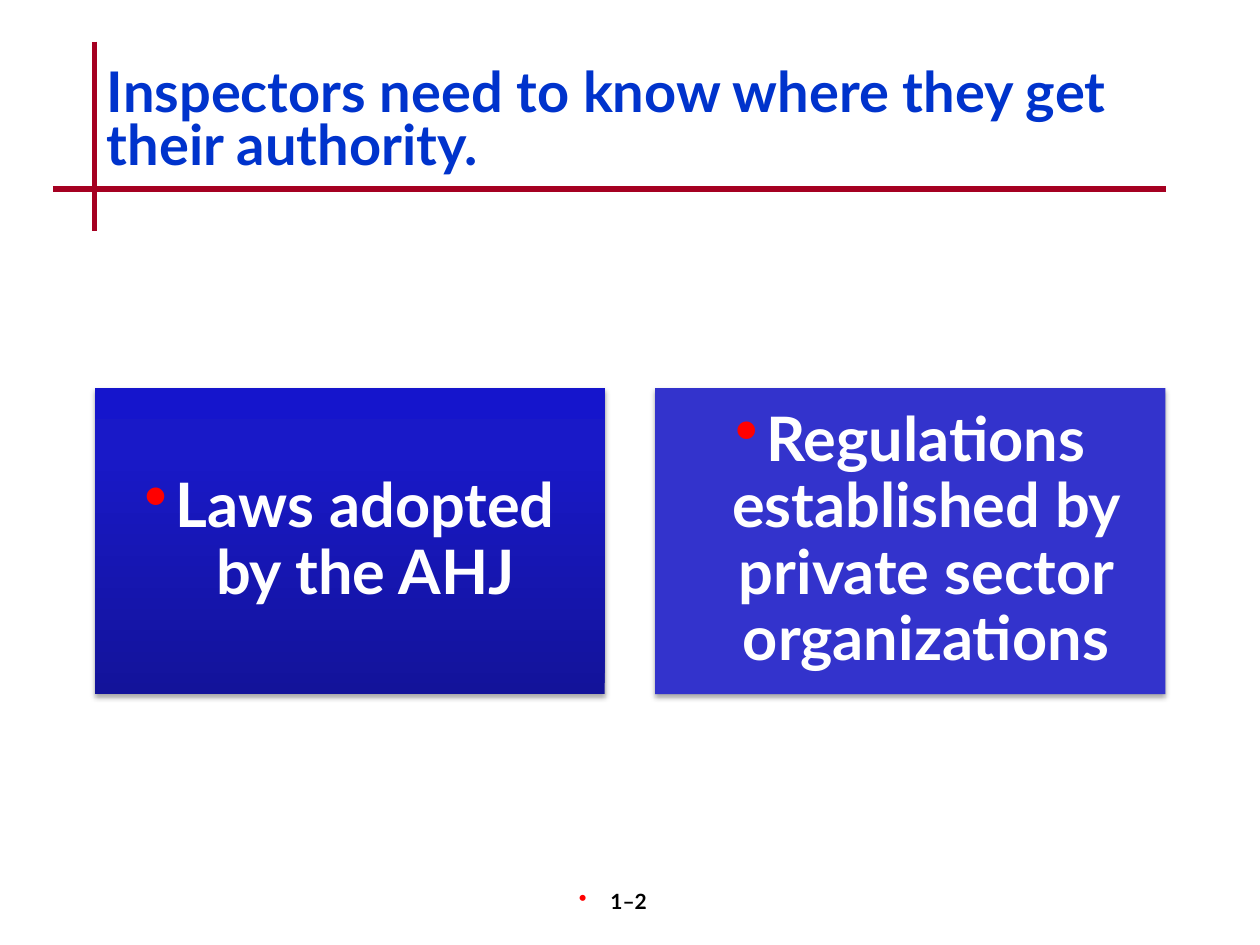
from dataclasses import dataclass

from lxml import etree
from pptx import Presentation
from pptx.dml.color import RGBColor
from pptx.enum.shapes import MSO_CONNECTOR as Connector, MSO_SHAPE as Shape
from pptx.enum.text import MSO_ANCHOR as Anchor, PP_ALIGN as Align
from pptx.oxml import parse_xml
from pptx.oxml.ns import nsdecls, qn
from pptx.util import Inches, Pt

RULE_RED = RGBColor(0xA5, 0x00, 0x21)
TITLE_BLUE = RGBColor(0x00, 0x33, 0xCC)
CARD_BLUE = RGBColor(0x33, 0x33, 0xCC)
BULLET_RED = RGBColor(0xFF, 0x00, 0x00)
BLACK = RGBColor(0x00, 0x00, 0x00)
WHITE = RGBColor(0xFF, 0xFF, 0xFF)
GRADIENT = (
    (0, RGBColor(0x13, 0x13, 0x9A)),
    (80, RGBColor(0x19, 0x19, 0xC8)),
    (100, RGBColor(0x15, 0x15, 0xCC)),
)

LEFT, RIGHT = 0.75, 9.25
CARD_WIDTH, CARD_HEIGHT, CARD_TOP = 4.05, 2.43, 3.08
BULLET_INDENT = 0.25


@dataclass
class Rule:
    start: tuple[float, float]
    end: tuple[float, float]


@dataclass
class TextStyle:
    size: int
    color: RGBColor
    align: Align = Align.CENTER
    spacing: float = 1.0
    bullet: bool = False


@dataclass
class Card:
    text: str
    left: float
    gradient: bool


RULES = (
    Rule((LEFT, 0.33), (LEFT, 1.83)),
    Rule((0.42, 1.5), (RIGHT, 1.5)),
)
CARDS = (
    Card("Laws adopted by the AHJ", LEFT, True),
    Card("Regulations established by private sector organizations",
         RIGHT - CARD_WIDTH, False),
)
TITLE_STYLE = TextStyle(32, TITLE_BLUE, Align.LEFT, 0.8)
CARD_STYLE = TextStyle(35, WHITE, spacing=0.9, bullet=True)
NUMBER_STYLE = TextStyle(12, BLACK, bullet=True)


def set_values(target, values: dict) -> None:
    for name, value in values.items():
        setattr(target, name, value)


def add_bullet(paragraph) -> None:
    properties = paragraph._p.get_or_add_pPr()
    properties.set("marL", str(Inches(BULLET_INDENT)))
    properties.set("indent", str(-Inches(BULLET_INDENT)))
    for xml in (
        f'<a:buClr {nsdecls("a")}><a:srgbClr val="{BULLET_RED}"/></a:buClr>',
        f'<a:buSzPct {nsdecls("a")} val="110000"/>',
        f'<a:buChar {nsdecls("a")} char="•"/>',
    ):
        properties.append(parse_xml(xml))


def write_text(shape, text: str, style: TextStyle, frame_values: dict) -> None:
    frame = shape.text_frame
    set_values(frame, {"word_wrap": True, **frame_values})
    paragraph = frame.paragraphs[0]
    if style.bullet:
        add_bullet(paragraph)
    set_values(paragraph, {"alignment": style.align, "line_spacing": style.spacing})
    run = paragraph.add_run()
    run.text = text
    set_values(run.font, {"name": "Lato", "size": Pt(style.size), "bold": True})
    run.font.color.rgb = style.color


def add_rule(slide, rule: Rule) -> None:
    points = [Inches(value) for value in (*rule.start, *rule.end)]
    connector = slide.shapes.add_connector(Connector.STRAIGHT, *points)
    connector.line.color.rgb = RULE_RED
    connector.line.width = Pt(3)
    etree.SubElement(connector._element.spPr, qn("a:effectLst"))


def fill_gradient(shape) -> None:
    shape.fill.gradient()
    gradient = shape._element.spPr.find(qn("a:gradFill"))
    stops = "".join(
        f'<a:gs pos="{position * 1000}"><a:srgbClr val="{color}"/></a:gs>'
        for position, color in GRADIENT
    )
    gradient.getparent().replace(gradient, parse_xml(
        f'<a:gradFill {nsdecls("a")} rotWithShape="1"><a:gsLst>{stops}</a:gsLst>'
        '<a:lin ang="16200000" scaled="0"/></a:gradFill>'))


def add_shadow(shape) -> None:
    shape.shadow.inherit = False
    effects = shape._element.spPr.find(qn("a:effectLst"))
    effects.append(parse_xml(
        f'<a:outerShdw {nsdecls("a")} blurRad="{Pt(3.1)}" dist="{Pt(1.8)}"'
        ' dir="5400000" rotWithShape="0"><a:srgbClr val="000000">'
        '<a:alpha val="35000"/></a:srgbClr></a:outerShdw>'))


def add_card(slide, card: Card) -> None:
    shape = slide.shapes.add_shape(
        Shape.RECTANGLE, Inches(card.left), Inches(CARD_TOP),
        Inches(CARD_WIDTH), Inches(CARD_HEIGHT))
    if card.gradient:
        fill_gradient(shape)
    else:
        shape.fill.solid()
        shape.fill.fore_color.rgb = CARD_BLUE
    shape.line.fill.background()
    add_shadow(shape)
    sides = ("left", "top", "right", "bottom")
    margins = {f"margin_{side}": Inches(0.15) for side in sides}
    write_text(shape, card.text, CARD_STYLE,
               {"vertical_anchor": Anchor.MIDDLE, **margins})


def main() -> None:
    presentation = Presentation()
    presentation.slide_width = Inches(10)
    presentation.slide_height = Inches(7.5)
    slide = presentation.slides.add_slide(presentation.slide_layouts[6])

    # Crossed rules around the title
    for rule in RULES:
        add_rule(slide, rule)

    # Page number, with a wider right margin to offset the bullet indent
    number = slide.shapes.add_textbox(Inches(3.92), Inches(7), Inches(2.08), Inches(0.5))
    write_text(number, "1–2", NUMBER_STYLE, {"margin_right": Inches(0.29)})

    # Title
    title = slide.shapes.add_textbox(
        Inches(LEFT), Inches(0.5), Inches(RIGHT - LEFT), Inches(1))
    write_text(title, "Inspectors need to know where they get their authority.",
               TITLE_STYLE, {"vertical_anchor": Anchor.TOP})

    # Sources of authority
    for card in CARDS:
        add_card(slide, card)

    presentation.save("out.pptx")


if __name__ == "__main__":
    main()
